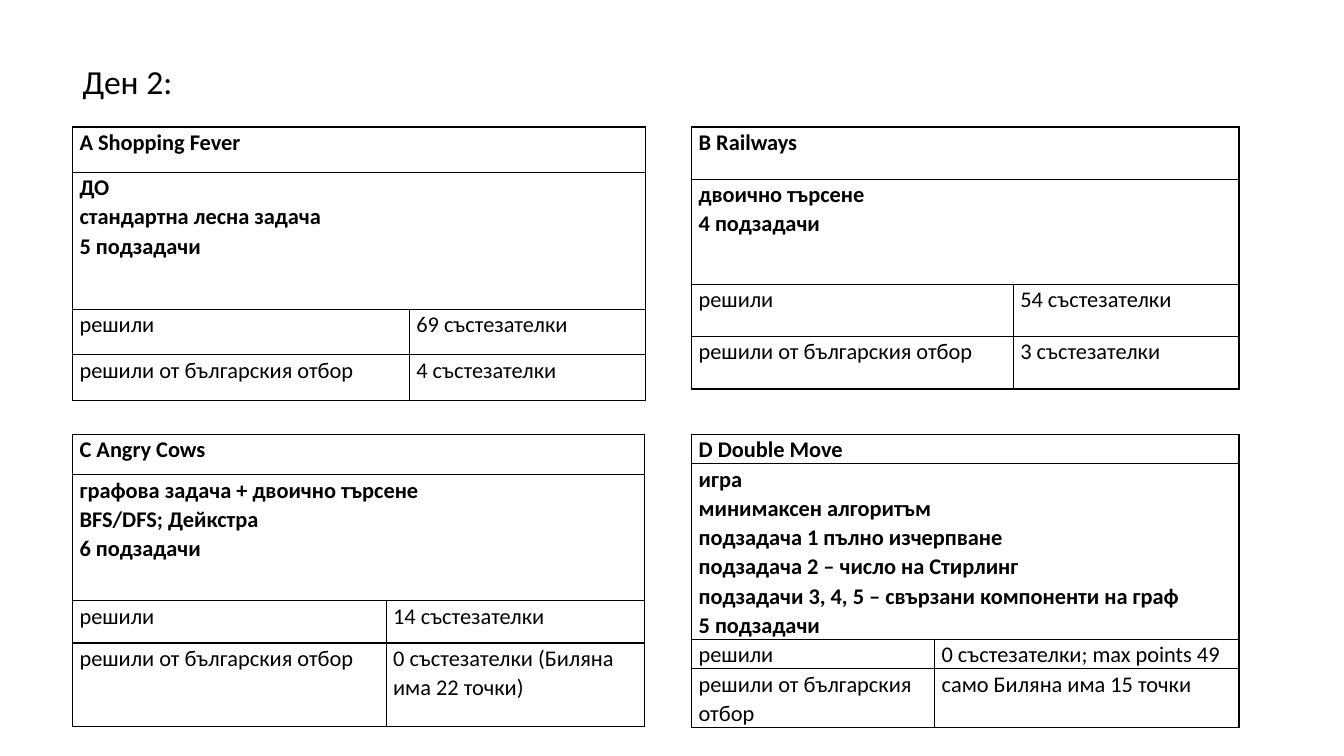
from lxml import etree
from pptx import Presentation
from pptx import util as u
from pptx.dml.color import RGBColor
from pptx.enum import text as t
from pptx.oxml import ns

COLORS = {"ink": "000000", "line": "000000"}
FONT = "Calibri"
LEFT, RIGHT = 0.72, 6.86
TOP, LOW = 1.26, 4.31
LABELS = ("решили", "решили от българския отбор")

# Each task: place, column widths, row heights, name, notes, results
TASKS = [
    ((LEFT, TOP), (3.34, 2.34), (0.45, 1.36, 0.45, 0.45),
     "А Shopping Fever",
     ["ДО", "стандартна лесна задача", "5 подзадачи"],
     ("69 състезателки", "4 състезателки")),
    ((RIGHT, TOP), (3.19, 2.24), (0.52, 1.04, 0.52, 0.52),
     "B Railways",
     ["двоично търсене", "4 подзадачи"],
     ("54 състезателки", "3 състезателки")),
    ((LEFT, LOW), (3.11, 2.56), (0.4, 1.25, 0.42, 0.83),
     "C Angry Cows",
     ["графова задача + двоично търсене", "BFS/DFS; Дейкстра", "6 подзадачи"],
     ("14 състезателки", "0 състезателки (Биляна има 22 точки)")),
    ((RIGHT, LOW), (2.41, 3.02), (0.29, 1.73, 0.29, 0.58),
     "D Double Move",
     ["игра", "минимаксен алгоритъм", "подзадача 1 пълно изчерпване",
      "подзадача 2 – число на Стирлинг",
      "подзадачи 3, 4, 5 – свързани компоненти на граф", "5 подзадачи"],
     ("0 състезателки; max points 49", "само Биляна има 15 точки")),
]


def write(frame, lines, size=16, bold=False, space=1.07):
    """Fill a text frame with one paragraph per line."""
    frame.word_wrap = True
    for i, line in enumerate(lines):
        para = frame.add_paragraph() if i else frame.paragraphs[0]
        para.alignment = t.PP_ALIGN.LEFT
        para.line_spacing = space
        run = para.add_run()
        run.text = line
        font = run.font
        font.name, font.size, font.bold = FONT, u.Pt(size), bold
        font.color.rgb = RGBColor.from_string(COLORS["ink"])


def frame_cell(cell):
    """Clear the fill, set the margins and draw all four borders."""
    cell.fill.background()
    cell.margin_left = cell.margin_right = u.Inches(0.07)
    cell.margin_top = cell.margin_bottom = 0
    props = cell._tc.get_or_add_tcPr()
    for i, side in enumerate(("lnL", "lnR", "lnT", "lnB")):
        line = etree.Element(ns.qn("a:" + side), w=str(u.Pt(1)))
        fill = etree.SubElement(line, ns.qn("a:solidFill"))
        etree.SubElement(fill, ns.qn("a:srgbClr"), val=COLORS["line"])
        props.insert(i, line)


def add_title(slide, words):
    title = slide.shapes.title
    title.left, title.top = u.Inches(LEFT), u.Inches(0.55)
    title.width, title.height = u.Inches(10.41), u.Inches(0.5)
    frame = title.text_frame
    frame.auto_size = t.MSO_AUTO_SIZE.NONE
    frame.vertical_anchor = t.MSO_ANCHOR.TOP
    write(frame, [words], size=24, space=1)


def add_task(slide, place, cols, rows, name, notes, results):
    box = [u.Inches(n) for n in (*place, sum(cols), sum(rows))]
    table = slide.shapes.add_table(len(rows), len(cols), *box).table
    table.first_row = table.horz_banding = False
    for col, width in zip(table.columns, cols):
        col.width = u.Inches(width)
    for row, height in zip(table.rows, rows):
        row.height = u.Inches(height)
    for cell in table.iter_cells():
        frame_cell(cell)

    # Name and notes span both columns
    for i, lines in enumerate(([name], notes)):
        table.cell(i, 0).merge(table.cell(i, 1))
        write(table.cell(i, 0).text_frame, lines, bold=True)

    # Results
    for i, pair in enumerate(zip(LABELS, results), 2):
        for j, words in enumerate(pair):
            write(table.cell(i, j).text_frame, [words])


def main():
    deck = Presentation()
    deck.slide_width, deck.slide_height = u.Inches(13.33), u.Inches(7.5)
    slide = deck.slides.add_slide(deck.slide_layouts[5])
    add_title(slide, "Ден 2:")
    for task in TASKS:
        add_task(slide, *task)
    deck.save("out.pptx")


if __name__ == "__main__":
    main()
